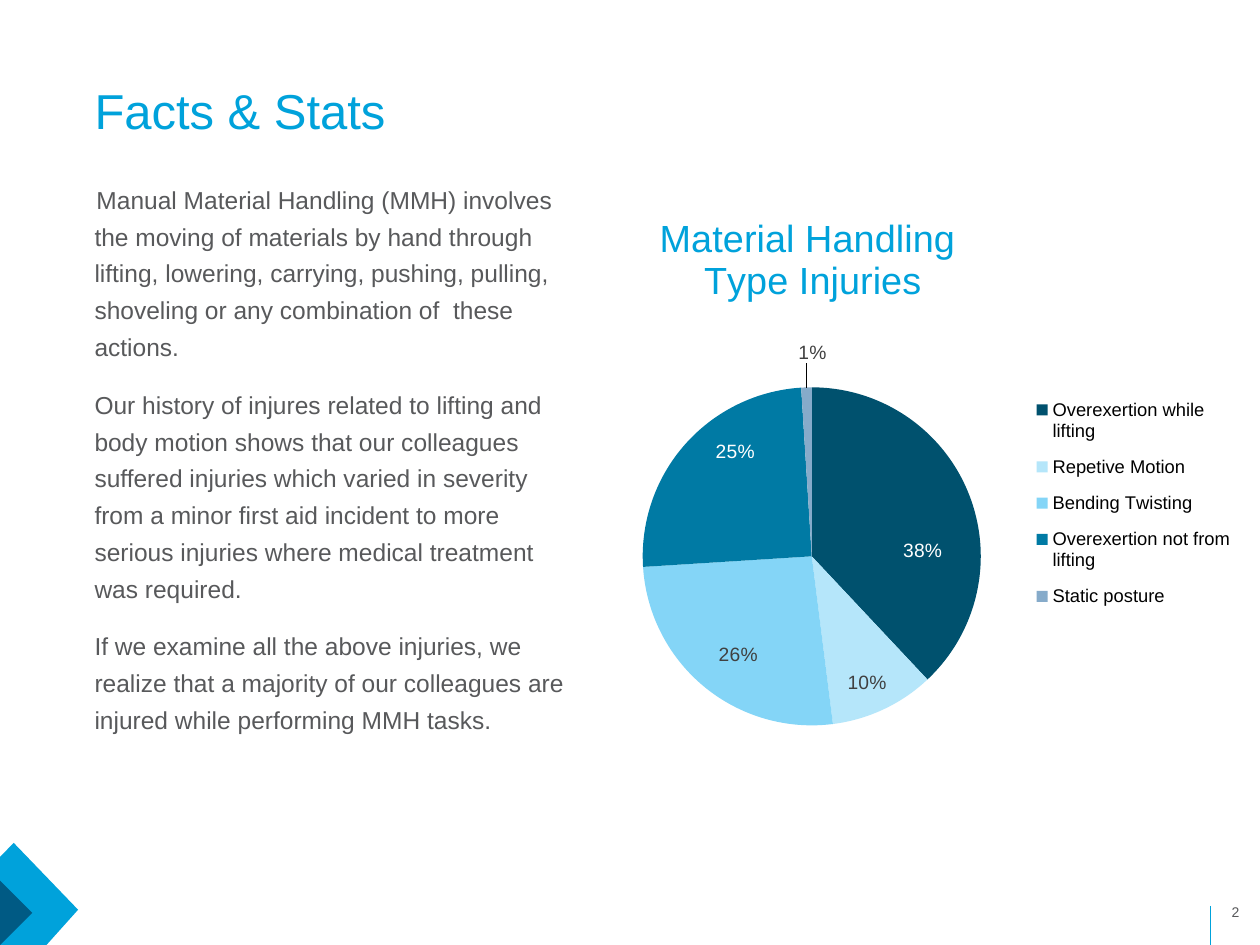
"""Build the Facts & Stats slide with its material handling pie chart."""
from typing import NamedTuple, Optional

from lxml.etree import Element, SubElement
from pptx import Presentation
from pptx.chart.data import CategoryChartData
from pptx.dml.color import RGBColor
from pptx.enum.chart import XL_CHART_TYPE, XL_LABEL_POSITION, XL_LEGEND_POSITION
from pptx.enum.shapes import MSO_CONNECTOR, MSO_SHAPE
from pptx.enum.text import MSO_ANCHOR, PP_ALIGN
from pptx.oxml.ns import qn
from pptx.util import Inches, Pt

FONT = "Arial"
SKY = RGBColor(0x00, 0xA2, 0xDB)
NAVY = RGBColor(0x00, 0x5A, 0x84)
GRAY = RGBColor(0x58, 0x59, 0x5B)
DARK = RGBColor(0x40, 0x40, 0x40)
WHITE = RGBColor(0xFF, 0xFF, 0xFF)
BLACK = RGBColor(0x00, 0x00, 0x00)


class Box(NamedTuple):
    """Position and size in inches."""

    left: float
    top: float
    width: float
    height: float

    def lengths(self):
        """Return the four values as lengths."""
        return [Inches(value) for value in self]


class Slice(NamedTuple):
    """One pie slice, with its label placed relative to the default spot."""

    category: str
    share: float
    fill: RGBColor
    label_color: RGBColor
    shift_x: float
    shift_y: float
    position: XL_LABEL_POSITION = XL_LABEL_POSITION.CENTER


SLICES = [
    Slice("Overexertion while lifting", 0.38, RGBColor(0x00, 0x51, 0x6E), WHITE, 0.05, 0.03),
    Slice("Repetive Motion", 0.10, RGBColor(0xB5, 0xE6, 0xFA), DARK, 0.03, 0.06),
    Slice("Bending Twisting", 0.26, RGBColor(0x84, 0xD5, 0xF7), DARK, -0.03, 0.04),
    Slice("Overexertion not from lifting", 0.25, RGBColor(0x00, 0x7A, 0xA4), WHITE, -0.02, -0.06),
    Slice("Static posture", 0.01, RGBColor(0x86, 0xAB, 0xCA), DARK, 0.01, -0.02,
          XL_LABEL_POSITION.OUTSIDE_END),
]
BODY = [
    "Manual Material Handling (MMH) involves the moving of materials by hand through lifting, "
    "lowering, carrying, pushing, pulling, shoveling or any combination of  these actions.",
    "Our history of injures related to lifting and body motion shows that our colleagues suffered "
    "injuries which varied in severity from a minor first aid incident to more serious injuries "
    "where medical treatment was required.",
    "If we examine all the above injuries, we realize that a majority of our colleagues are "
    "injured while performing MMH tasks.",
]
CHEVRON = [(-0.01, 6.81), (0.11, 6.69), (0.62, 7.22), (0.36, 7.51), (-0.01, 7.51)]


def style_font(font, size: float, color: RGBColor) -> None:
    """Set the family, size and colour of a font."""
    font.name, font.size = FONT, Pt(size)
    font.color.rgb = color


def add_text(slide, box: Box, paragraphs: list[str], *, size: float, color: RGBColor,
             anchor=MSO_ANCHOR.TOP, align=PP_ALIGN.LEFT, line_spacing=None, gap: float = 0):
    """Add a text box without margins and return its text frame."""
    frame = slide.shapes.add_textbox(*box.lengths()).text_frame
    frame.word_wrap, frame.vertical_anchor = True, anchor
    frame.margin_left = frame.margin_top = frame.margin_right = frame.margin_bottom = 0
    for index, text in enumerate(paragraphs):
        paragraph = frame.paragraphs[0] if index == 0 else frame.add_paragraph()
        paragraph.alignment, paragraph.line_spacing = align, line_spacing
        paragraph.space_before = paragraph.space_after = Pt(gap)
        run = paragraph.add_run()
        run.text = text
        style_font(run.font, size, color)
    return frame


def add_white_bullet(paragraph) -> None:
    """Give a paragraph a small white bullet."""
    properties = paragraph._p.get_or_add_pPr()
    color = SubElement(properties, qn("a:buClr"))
    SubElement(color, qn("a:srgbClr"), val=str(WHITE))
    SubElement(properties, qn("a:buSzPct"), val="25000")
    SubElement(properties, qn("a:buChar"), char="›")


def paint(shape, color: RGBColor) -> None:
    """Fill a shape and remove its outline and shadow."""
    shape.shadow.inherit = False
    shape.fill.solid()
    shape.fill.fore_color.rgb = color
    shape.line.fill.background()


def add_decoration(slide) -> None:
    """Draw the corner chevrons and the page number rule."""
    rule = slide.shapes.add_connector(
        MSO_CONNECTOR.STRAIGHT, Inches(9.61), Inches(7.19), Inches(9.61), Inches(7.5))
    rule.line.color.rgb, rule.line.width = SKY, Pt(0.5)
    SubElement(rule._element.spPr, qn("a:effectLst"))
    points = [(Inches(x), Inches(y)) for x, y in CHEVRON]
    builder = slide.shapes.build_freeform(*points[0])
    builder.add_line_segments(points[1:], close=True)
    paint(builder.convert_to_shape(), SKY)
    triangle = slide.shapes.add_shape(
        MSO_SHAPE.RIGHT_TRIANGLE, *Box(-0.19, 7.06, 0.37, 0.37).lengths())
    triangle.rotation = 225
    paint(triangle, NAVY)


def set_layout(parent, index: int, x: float, y: float, width: Optional[float] = None,
               height: Optional[float] = None, *, edge: bool = True, inner: bool = False) -> None:
    """Place a chart part by fractions of the chart size."""
    for old in parent.findall(qn("c:layout")):
        parent.remove(old)
    layout = Element(qn("c:layout"))
    manual = SubElement(layout, qn("c:manualLayout"))
    values = {"layoutTarget": "inner" if inner else None,
              "xMode": "edge" if edge else None, "yMode": "edge" if edge else None,
              "x": x, "y": y, "w": width, "h": height}
    for name, value in values.items():
        if value is not None:
            SubElement(manual, qn(f"c:{name}"), val=str(value))
    parent.insert(index, layout)


def add_pie(slide, box: Box) -> None:
    """Add the pie chart of injury types."""
    data = CategoryChartData(number_format="0%")
    data.categories = [item.category for item in SLICES]
    data.add_series("Series 1", [item.share for item in SLICES])
    chart = slide.shapes.add_chart(XL_CHART_TYPE.PIE, *box.lengths(), data).chart
    style_font(chart.font, 18, BLACK)

    title = chart.chart_title
    title.text_frame.text = "Material Handling \nType Injuries"
    for paragraph in title.text_frame.paragraphs:
        paragraph.alignment = PP_ALIGN.CENTER
        for run in paragraph.runs:
            style_font(run.font, 21.6, SKY)
            run.font.bold = False
    set_layout(title._element, 1, 0.09, 0.22)

    chart.has_legend = True
    chart.legend.position = XL_LEGEND_POSITION.RIGHT
    chart.legend.include_in_layout = False
    style_font(chart.legend.font, 10.5, BLACK)
    set_layout(chart.legend._element, 1, 0.66, 0.43, 0.33, 0.29)

    plot = chart.plots[0]
    plot.vary_by_categories = True
    set_layout(chart._chartSpace.chart.plotArea, 0, 0.07, 0.43, 0.52, 0.42, inner=True)
    series = plot.series[0]
    labels = series.data_labels
    labels.show_value = True
    labels.number_format, labels.number_format_is_linked = "0%", False
    style_font(labels.font, 11, WHITE)
    for index, item in enumerate(SLICES):
        point = series.points[index]
        point.format.fill.solid()
        point.format.fill.fore_color.rgb = item.fill
        point.data_label.position = item.position
        style_font(point.data_label.font, 11, item.label_color)
    for item, label in zip(SLICES, chart._chartSpace.iter(qn("c:dLbl"))):
        set_layout(label, 1, item.shift_x, item.shift_y, edge=False)


def main() -> None:
    """Build and save the presentation."""
    presentation = Presentation()
    presentation.slide_width, presentation.slide_height = Inches(10), Inches(7.5)
    slide = presentation.slides.add_slide(presentation.slide_layouts[6])
    add_decoration(slide)
    add_text(slide, Box(0.75, 0.51, 4.09, 0.79), ["Facts & Stats"], size=28, color=SKY,
             anchor=MSO_ANCHOR.MIDDLE, line_spacing=0.9)
    add_text(slide, Box(9.61, 7.09, 0.39, 0.21), ["2"], size=8, color=GRAY,
             anchor=MSO_ANCHOR.BOTTOM, align=PP_ALIGN.CENTER)
    body = add_text(slide, Box(0.75, 1.41, 3.85, 5.36), BODY, size=14, color=GRAY,
                    line_spacing=Pt(21), gap=6)
    add_white_bullet(body.paragraphs[0])
    add_pie(slide, Box(4.74, 0.25, 5.16, 6.51))
    presentation.save("out.pptx")


if __name__ == "__main__":
    main()
